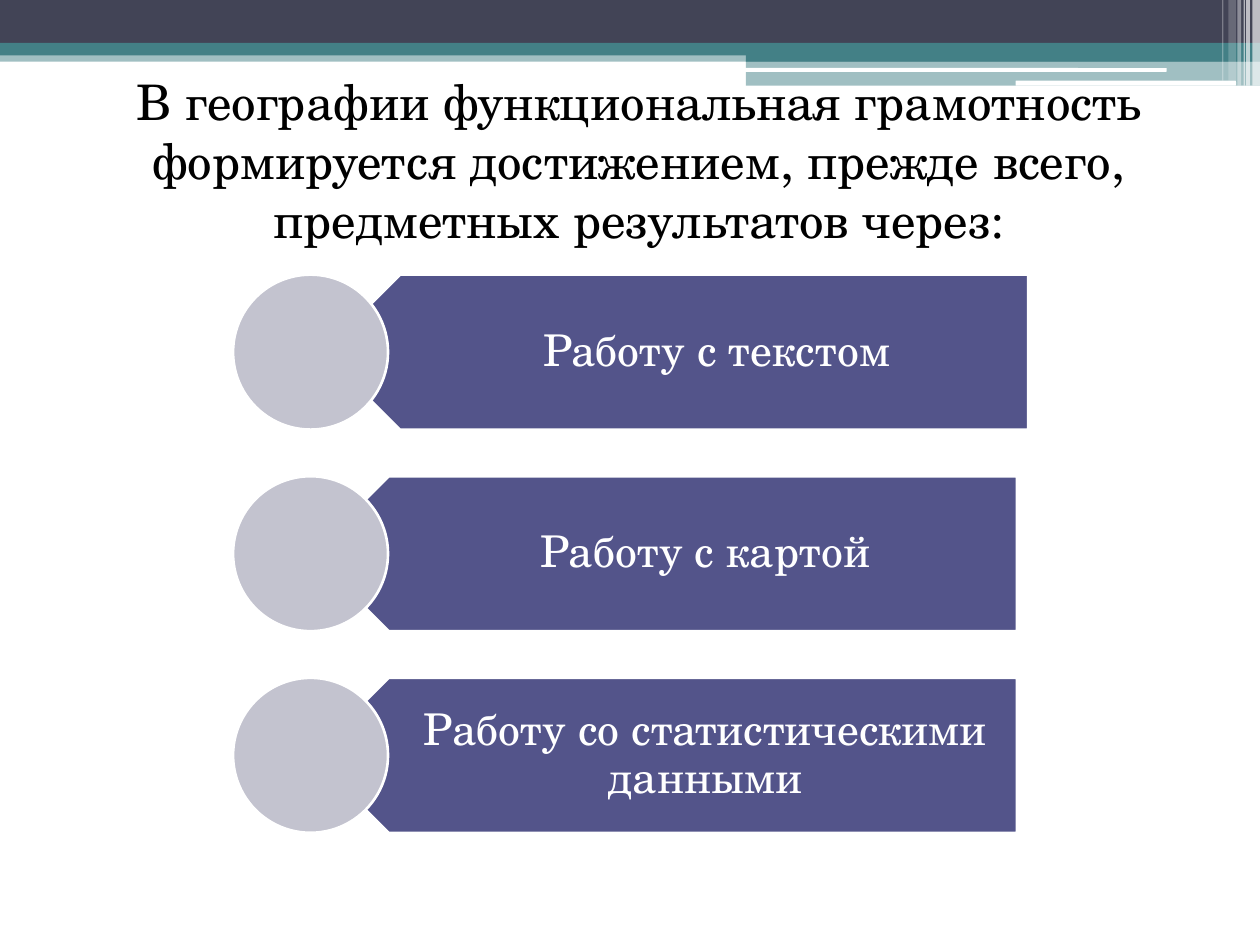
import pptx
import pptx.util
import pptx.dml.color
import pptx.enum.shapes
import pptx.enum.text
import pptx.oxml.ns
from lxml import etree

Inches = pptx.util.Inches
Pt = pptx.util.Pt
SHAPE = pptx.enum.shapes.MSO_SHAPE
ALIGN = pptx.enum.text.PP_ALIGN
ANCHOR = pptx.enum.text.MSO_ANCHOR
qn = pptx.oxml.ns.qn

FONT = "TeX Gyre Schola"
COLORS = {
    "dark": "424456",
    "teal": "438086",
    "white": "FFFFFF",
    "black": "000000",
    "plate": "53548A",
    "circle": "C3C3CF",
}
HEADING = ("В географии функциональная грамотность формируется достижением, "
           "прежде всего, предметных результатов через:")

# left, top, width, height, colour, opacity in percent
BANDS = [
    (0, 0.4, 10, 0.09, "teal", 50),
    (0, 0, 10, 0.34, "dark", 100),
    (0, 0.34, 10, 0.1, "teal", 100),
    (5.92, 0.39, 4.08, 0.1, "teal", 100),
    (5.92, 0.48, 4.08, 0.2, "teal", 50),
]
ROUNDED_BARS = [(5.91, 0.54, 3.35, 0.03), (8.06, 0.64, 1.75, 0.04)]
# left, width, height, opacity in percent
STRIPES = [
    (9.94, 0.06, 0.68, 65),
    (9.89, 0.03, 0.68, 65),
    (9.87, 0.01, 0.68, 60),
    (9.82, 0.03, 0.68, 40),
    (9.75, 0.06, 0.64, 20),
    (9.7, 0.01, 0.64, 30),
]

# text, left of plate
ITEMS = [
    ("Работу с текстом", 2.56),
    ("Работу с картой", 2.47),
    ("Работу со статистическими данными", 2.47),
]
FIRST_TOP, PITCH, ITEM_H = 2.18, 1.6, 1.23
PLATE_W, CIRCLE_LEFT = 5.6, 1.85
TEXT_INDENT = 0.31


def rgb(name):
    return pptx.dml.color.RGBColor.from_string(COLORS[name])


def add_shape(slide, kind, box, color, opacity=100, outlined=False):
    sp = slide.shapes.add_shape(kind, *map(Inches, box))
    sp.shadow.inherit = False
    sp.fill.solid()
    sp.fill.fore_color.rgb = rgb(color)
    if opacity < 100:
        clr = sp.fill._xPr.find(qn("a:solidFill"))[0]
        etree.SubElement(clr, qn("a:alpha"), val=str(opacity * 1000))
    if outlined:
        sp.line.color.rgb = rgb("white")
        sp.line.width = Pt(1.5)
    else:
        sp.line.fill.background()
    return sp


def write_centred(tf, text, size, color):
    tf.word_wrap = True
    tf.auto_size = pptx.enum.text.MSO_AUTO_SIZE.NONE
    p = tf.paragraphs[0]
    p.text = text
    p.alignment = ALIGN.CENTER
    p.font.size = Pt(size)
    p.font.name = FONT
    p.font.color.rgb = rgb(color)
    return p


def add_header(slide):
    for *box, color, opacity in BANDS:
        add_shape(slide, SHAPE.RECTANGLE, box, color, opacity)
    for box in ROUNDED_BARS:
        add_shape(slide, SHAPE.ROUNDED_RECTANGLE, box, "white")
    for left, width, height, opacity in STRIPES:
        add_shape(slide, SHAPE.RECTANGLE, (left, 0, width, height), "white", opacity)


def add_heading(slide):
    """Fill the body placeholder and bring it in front of the header."""
    body = slide.placeholders[1]
    body.left, body.top, body.width, body.height = map(Inches, (0.51, 0.52, 9, 1.73))
    p = write_centred(body.text_frame, HEADING, 28, "black")
    p.space_before = Pt(3)
    pPr = p._p.get_or_add_pPr()
    pPr.set("marL", str(Inches(0.12)))
    pPr.set("indent", "0")
    pPr.insert_element_before(etree.Element(qn("a:buNone")), "a:tabLst", "a:defRPr", "a:extLst")
    slide.shapes._spTree.append(body._element)


def add_item(slide, text, left, top):
    """Left-pointing plate with its label and a circle over the tip."""
    plate = add_shape(slide, SHAPE.PENTAGON, (left, top, PLATE_W, ITEM_H), "plate", outlined=True)
    plate.rotation = 180

    box = (left + TEXT_INDENT, top, PLATE_W - TEXT_INDENT, ITEM_H)
    tf = slide.shapes.add_textbox(*map(Inches, box)).text_frame
    tf.vertical_anchor = ANCHOR.MIDDLE
    tf.margin_left, tf.margin_right = Inches(0.54), Inches(0.19)
    tf.margin_top = tf.margin_bottom = Inches(0.1)
    p = write_centred(tf, text, 25, "white")
    p.line_spacing = 0.9

    add_shape(slide, SHAPE.OVAL, (CIRCLE_LEFT, top, ITEM_H, ITEM_H), "circle", outlined=True)


def main():
    prs = pptx.Presentation()
    prs.slide_width, prs.slide_height = Inches(10), Inches(7.5)
    slide = prs.slides.add_slide(prs.slide_layouts[1])
    title = slide.shapes.title._element
    title.getparent().remove(title)

    add_header(slide)
    add_heading(slide)
    for i, (text, left) in enumerate(ITEMS):
        add_item(slide, text, left, FIRST_TOP + i * PITCH)
    prs.save("out.pptx")


if __name__ == "__main__":
    main()
